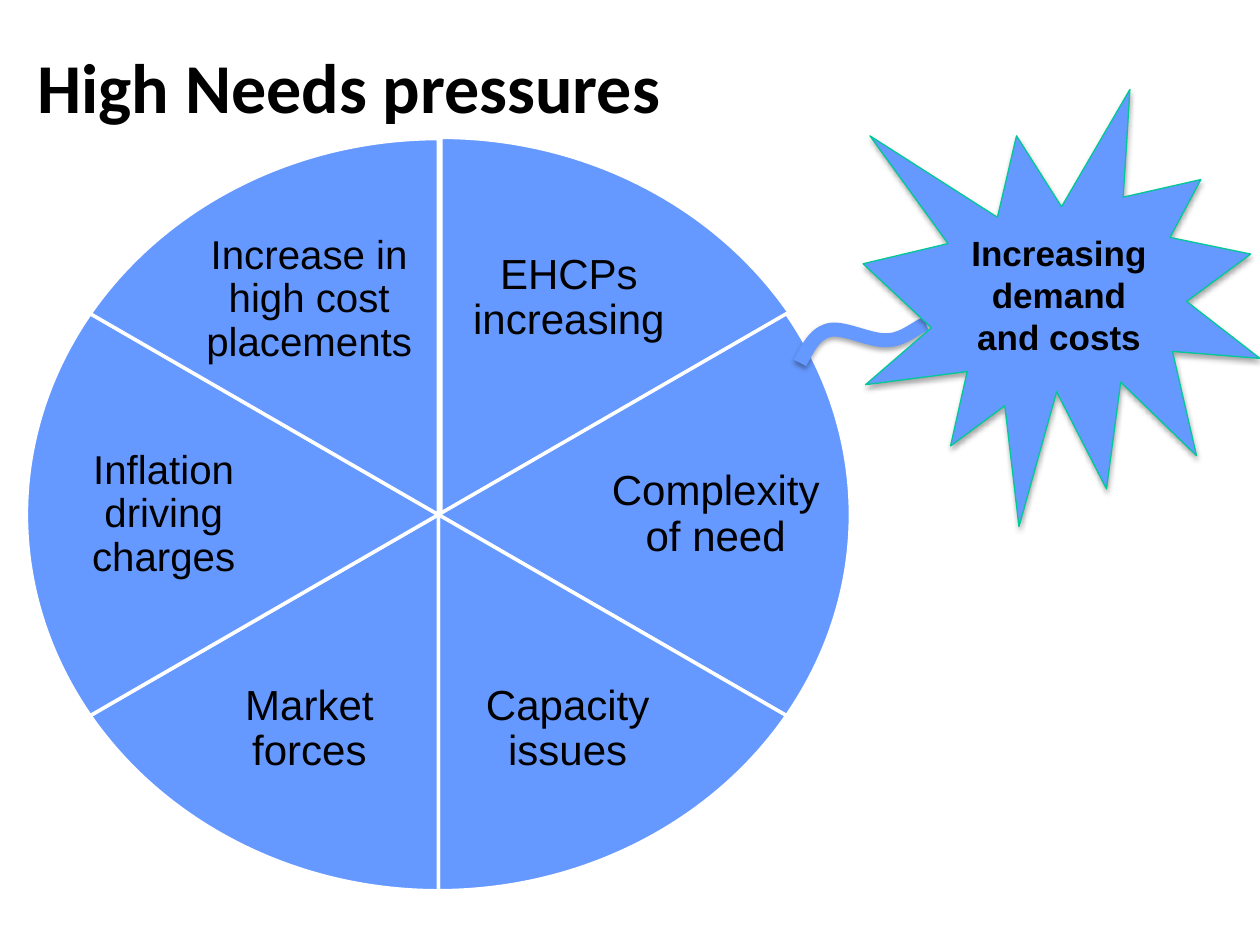
from typing import NamedTuple

from lxml.etree import SubElement
from pptx import Presentation
from pptx.dml.color import RGBColor
from pptx.enum.shapes import MSO_SHAPE
from pptx.enum.text import MSO_ANCHOR, PP_ALIGN
from pptx.oxml.ns import qn
from pptx.util import Inches, Pt

COLORS = {"blue": "6699FF", "green": "00C896", "white": "FFFFFF", "black": "000000"}


class Box(NamedTuple):
    """Position and size in inches."""
    left: float
    top: float
    width: float
    height: float

    def emu(self) -> list:
        """Return the four lengths for python-pptx."""
        return [Inches(value) for value in self]


class Wedge(NamedTuple):
    """One sixth of the wheel and its label."""
    label: str
    area: Box
    size: int = 24


WHEEL = Box(0.21, 1.1, 6.54, 5.97)
FIRST = Box(0.23, 1.09, 6.54, 5.97)
WEDGES = [
    Wedge("EHCPs increasing", Box(3.56, 1.73, 1.91, 1.28)),
    Wedge("Complexity of need", Box(4.69, 3.48, 1.98, 1.21)),
    Wedge("Capacity issues", Box(3.55, 5.15, 1.91, 1.28)),
    Wedge("Market forces", Box(1.5, 5.15, 1.91, 1.28)),
    Wedge("Inflation driving charges", Box(0.31, 3.48, 1.98, 1.21), 23),
    Wedge("Increase in high cost placements", Box(1.5, 1.74, 1.91, 1.28), 23),
]
TAIL = [
    ((6.35, 2.88), (6.41, 2.77), (6.46, 2.65), (6.58, 2.62)),
    ((6.58, 2.62), (6.69, 2.59), (6.91, 2.71), (7.04, 2.7)),
    ((7.04, 2.7), (7.17, 2.7), (7.28, 2.59), (7.35, 2.57)),
]
STEPS = 12


def tint(name: str) -> RGBColor:
    """Look up a named colour."""
    return RGBColor.from_string(COLORS[name])


def write(shape, text: str, *, size: int, font: str = "Arial", bold: bool = False,
          align=PP_ALIGN.CENTER, pad: float | None = None, lead: float | None = None) -> None:
    """Put formatted text in a shape."""
    frame = shape.text_frame
    frame.word_wrap = True
    frame.vertical_anchor = MSO_ANCHOR.MIDDLE
    if pad is not None:
        frame.margin_left = frame.margin_right = Inches(pad)
        frame.margin_top = frame.margin_bottom = Inches(pad)
    para = frame.paragraphs[0]
    para.alignment = align
    if lead is not None:
        para.line_spacing = lead
    run = para.add_run()
    run.text = text
    run.font.name, run.font.size, run.font.bold = font, Pt(size), bold
    run.font.color.rgb = tint("black")


def paint(shape, fill: str | None, line: str, width: float) -> None:
    """Set fill and outline and remove the theme shadow."""
    if fill:
        shape.fill.solid()
        shape.fill.fore_color.rgb = tint(fill)
    else:
        shape.fill.background()
    shape.line.color.rgb = tint(line)
    shape.line.width = Pt(width)
    shape.shadow.inherit = False


def shade(shape) -> None:
    """Add a soft shadow below a painted shape."""
    effects = shape._element.spPr.find(qn("a:effectLst"))
    outer = SubElement(effects, qn("a:outerShdw"), blurRad=str(Pt(3.1)),
                       dist=str(Pt(1.8)), dir="5400000", rotWithShape="0")
    color = SubElement(outer, qn("a:srgbClr"), val=COLORS["black"])
    SubElement(color, qn("a:alpha"), val="35000")


def slice_pie(shapes, index: int, wedge: Wedge) -> None:
    """Draw one wedge, clockwise from the top, with its label."""
    pie = shapes.add_shape(MSO_SHAPE.PIE, *(WHEEL if index else FIRST).emu())
    for side in range(2):
        angle = (270 + 60 * (index + side)) % 360
        pie.adjustments[side] = angle * 0.6
    paint(pie, "blue", "white", 2)
    label = shapes.add_textbox(*wedge.area.emu())
    write(label, wedge.label, size=wedge.size, pad=0.03, lead=0.9)


def bend(curve: tuple, t: float) -> tuple:
    """Return the point at t on a cubic curve."""
    parts = ((1 - t) ** 3, 3 * t * (1 - t) ** 2, 3 * t * t * (1 - t), t ** 3)
    return tuple(Inches(sum(p * point[axis] for p, point in zip(parts, curve)))
                 for axis in range(2))


def draw_tail(shapes) -> None:
    """Draw the wavy link from the wheel to the burst."""
    points = [bend(curve, step / STEPS) for curve in TAIL for step in range(1, STEPS + 1)]
    path = shapes.build_freeform(*bend(TAIL[0], 0))
    path.add_line_segments(points, close=False)
    tail = path.convert_to_shape()
    paint(tail, None, "blue", 8)
    shade(tail)


def draw_burst(shapes) -> None:
    """Draw the burst with its message."""
    burst = shapes.add_shape(MSO_SHAPE.EXPLOSION1, *Box(6.85, 0.71, 3.15, 3.47).emu())
    paint(burst, "blue", "green", 0.75)
    shade(burst)
    write(burst, "Increasing demand and costs", size=20, bold=True)


def main() -> None:
    """Build and save the slide."""
    deck = Presentation()
    deck.slide_width, deck.slide_height = Inches(10), Inches(7.5)
    shapes = deck.slides.add_slide(deck.slide_layouts[6]).shapes
    title = shapes.add_textbox(*Box(0.2, -0.03, 9.69, 1.42).emu())
    write(title, "High Needs pressures", size=40, font="Calibri", bold=True,
          align=PP_ALIGN.LEFT)
    for index, wedge in enumerate(WEDGES):
        slice_pie(shapes, index, wedge)
    draw_tail(shapes)
    draw_burst(shapes)
    deck.save("out.pptx")


if __name__ == "__main__":
    main()
